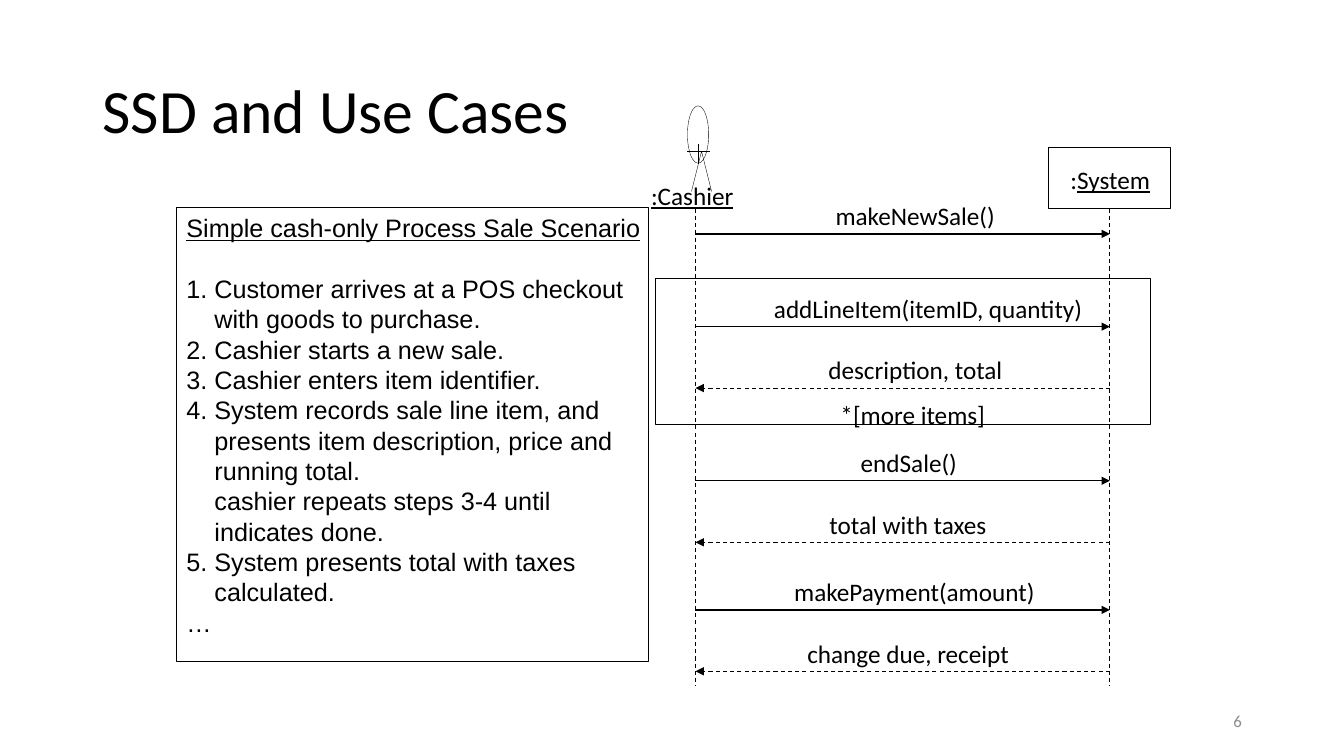
from pptx import Presentation
from pptx.dml.color import RGBColor as RGB
from pptx.enum.dml import MSO_LINE as DASH
from pptx.enum.shapes import MSO_CONNECTOR as CONNECTOR, MSO_SHAPE as SHAPE
from pptx.enum.text import MSO_ANCHOR as ANCHOR, MSO_AUTO_SIZE as FIT, PP_ALIGN as ALIGN
from pptx.oxml.ns import qn
from pptx.util import Inches, Pt
from lxml.etree import SubElement

COLORS = {"ink": "000000", "page": "8C8C8C"}
WIDTH, HEIGHT = Inches(13.33), Inches(7.5)

# All positions are percentages of the slide's width (x) and height (y)
CASHIER_X, SYSTEM_X = 51.75, 82.58
LIFELINE_TOP, LIFELINE_END = 27.6, 90.8
LABEL_RISE, LABEL_HEIGHT = 5.07, 5.33

# Text, arrow y, label left, label width, whether it is a reply
MESSAGES = [
    ("makeNewSale()", 30.93, 61.43, 13.5, False),
    ("addLineItem(itemID, quantity)", 43.2, 56.85, 24.75, False),
    ("description, total", 51.33, 60.9, 15.15, True),
    ("endSale()", 63.6, 63.3, 8.78, False),
    ("total with taxes", 71.73, 60.98, 13.28, True),
    ("makePayment(amount)", 80.67, 58.35, 19.58, False),
    ("change due, receipt", 88.8, 59.33, 16.73, True),
]

SCENARIO_TITLE = "Simple cash-only Process Sale Scenario"
# \v breaks a line inside a step
SCENARIO_STEPS = [
    "1. Customer arrives at a POS checkout\vwith goods to purchase.",
    "2. Cashier starts a new sale.",
    "3. Cashier enters item identifier.",
    "4. System records sale line item, and\vpresents item description, price and\v"
    "running total.\vcashier repeats steps 3-4 until\vindicates done.",
    "5. System presents total with taxes\vcalculated.",
    "…",
]


def across(share):
    return round(WIDTH * share / 100)


def down(share):
    return round(HEIGHT * share / 100)


def box(x, y, width, height):
    return across(x), down(y), across(width), down(height)


def style_runs(paragraph, size=18, font="Calibri", color="ink", underline=None):
    for run in paragraph.runs:
        run.font.size = Pt(size)
        run.font.name = font
        run.font.underline = underline
        run.font.color.rgb = RGB.from_string(COLORS[color])


def style_line(outlined, weight, dashed=False):
    outlined.line.color.rgb = RGB.from_string(COLORS["ink"])
    outlined.line.width = Pt(weight)
    if dashed:
        outlined.line.dash_style = DASH.DASH


def add_text(slide, text, area, wrap=False, **style):
    frame = slide.shapes.add_textbox(*box(*area)).text_frame
    frame.word_wrap = wrap
    frame.auto_size = FIT.NONE if wrap else FIT.SHAPE_TO_FIT_TEXT
    frame.text = text
    style_runs(frame.paragraphs[0], **style)
    return frame


def add_outline(shapes, area, weight=0.75, kind=SHAPE.RECTANGLE):
    outline = shapes.add_shape(kind, *box(*area))
    outline.shadow.inherit = False
    outline.fill.background()
    style_line(outline, weight)


def add_line(shapes, start, end, weight=0.75, dashed=False, arrow=False):
    line = shapes.add_connector(CONNECTOR.STRAIGHT, across(start[0]), down(start[1]),
                                across(end[0]), down(end[1]))
    style_line(line, weight, dashed)
    if arrow:
        SubElement(line.line._get_or_add_ln(), qn("a:tailEnd"), type="triangle")
    SubElement(line._element.spPr, qn("a:effectLst"))


def add_message(slide, text, y, label_x, label_width, reply):
    start, end = (CASHIER_X, y), (SYSTEM_X, y)
    if reply:
        start, end = end, start
    add_line(slide.shapes, start, end, 0.75 if reply else 1, dashed=reply, arrow=True)
    add_text(slide, text, (label_x, y - LABEL_RISE, label_width, LABEL_HEIGHT))


def add_cashier(slide):
    figure = slide.shapes.add_group_shape().shapes
    add_line(figure, (51.98, 19.07), (51.98, 21.73), 0.25)
    pen = figure.build_freeform(across(51.45), down(25.33))
    pen.add_line_segments([(across(52.2), down(20)), (across(52.95), down(25.33))],
                          close=False)
    legs = pen.convert_to_shape()
    legs.shadow.inherit = False
    legs.fill.background()
    style_line(legs, 0.25)
    add_outline(figure, (51.15, 14, 1.58, 7.6), 0.25, SHAPE.OVAL)
    add_line(figure, (51.15, 20), (52.8, 20), 0.25)
    add_text(slide, ":Cashier", (47.7, 23.2, 7.73, LABEL_HEIGHT), underline=True)


def add_system(slide):
    add_outline(slide.shapes, (78, 19.47, 9.08, 8.13))
    label = add_text(slide, ":", (78.9, 21.07, 7.5, LABEL_HEIGHT)).paragraphs[0]
    label.add_run().text = "System"
    style_runs(label)
    label.runs[1].font.underline = True


def add_scenario(slide):
    frame = add_text(slide, SCENARIO_TITLE, (13.13, 27.47, 35.25, 57.47),
                     font="Arial", underline=True)
    heading = frame.paragraphs[0]
    heading.line_spacing = heading.space_after = Pt(21.65)
    for text in SCENARIO_STEPS:
        step = frame.add_paragraph()
        step.text = text
        step.line_spacing = Pt(21.65)
        # Hanging indent as wide as the step number
        hang = Pt(20)
        properties = step._p.get_or_add_pPr()
        properties.set("marL", str(hang))
        properties.set("indent", str(-hang))
        style_runs(step, font="Arial")
    add_outline(slide.shapes, (13.13, 27.47, 35.1, 60))


def main():
    deck = Presentation()
    deck.slide_width, deck.slide_height = WIDTH, HEIGHT
    slide = deck.slides.add_slide(deck.slide_layouts[6])

    # Title and page number
    title = add_text(slide, "SSD and Use Cases", (6.9, 5.33, 86.25, 19.33),
                     wrap=True, size=44)
    title.vertical_anchor = ANCHOR.MIDDLE
    title.paragraphs[0].line_spacing = 0.9
    page = add_text(slide, "6", (70.65, 92.67, 22.5, 5.33),
                    wrap=True, size=12, color="page")
    page.vertical_anchor = ANCHOR.MIDDLE
    page.paragraphs[0].alignment = ALIGN.RIGHT

    # Sequence diagram
    for message in MESSAGES:
        add_message(slide, *message)
    add_outline(slide.shapes, (48.75, 36.8, 36.83, 19.33))
    add_text(slide, "*[more items]", (61.8, 52.13, 12.53, LABEL_HEIGHT))
    for x in (CASHIER_X, SYSTEM_X):
        add_line(slide.shapes, (x, LIFELINE_TOP), (x, LIFELINE_END), dashed=True)
    add_cashier(slide)
    add_system(slide)

    # Use case text
    add_scenario(slide)
    deck.save("out.pptx")


if __name__ == "__main__":
    main()
